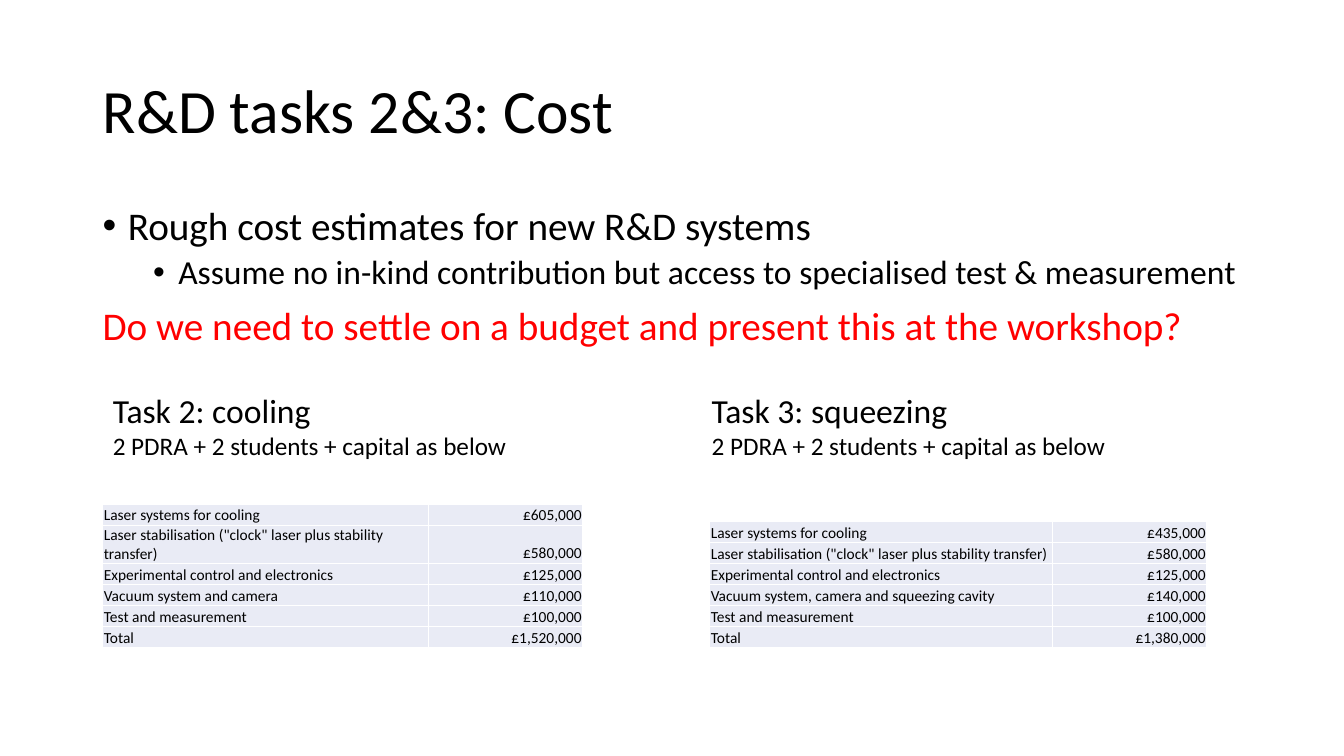
from lxml.etree import SubElement as Sub
from pptx import Presentation
from pptx.dml.color import RGBColor as RGB
from pptx.enum.text import MSO_ANCHOR as Anchor, PP_ALIGN as Align
from pptx.oxml import parse_xml
from pptx.oxml.ns import nsdecls, qn
from pptx.util import Inches as In, Pt

BLACK = RGB(0, 0, 0)
RED = RGB(255, 0, 0)
PALE = RGB(0xE9, 0xEB, 0xF5)
EDGE = "FFFFFF"
FONT = "Calibri"

TITLE = "R&D tasks 2&3: Cost"
# text, size, colour, space before, left indent of a bullet
BODY = [
    ("Rough cost estimates for new R&D systems", 28, BLACK, 10, 0.25),
    ("Assume no in-kind contribution but access to specialised test & measurement",
     24, BLACK, 5, 0.75),
    ("Do we need to settle on a budget and present this at the workshop?",
     28, RED, 10, None),
]
STAFF = "2 PDRA + 2 students + capital as below"
ITEMS = [
    "Laser systems for cooling",
    'Laser stabilisation ("clock" laser plus stability transfer)',
    "Experimental control and electronics",
    "{}",
    "Test and measurement",
]
# heading, fourth item, costs, heading box, table left and top, first column
TASKS = [
    ("Task 2: cooling", "Vacuum system and camera",
     (605000, 580000, 125000, 110000, 100000),
     (1.02, 3.82, 4.28, 1.11), (1.02, 5), 3.23),
    ("Task 3: squeezing", "Vacuum system, camera and squeezing cavity",
     (435000, 580000, 125000, 140000, 100000),
     (6.96, 3.82, 4.15, 0.81), (7.04, 5.17), 3.4),
]
LEFT, WIDE = 0.92, 11.5
COST, ROW = 1.53, 0.21

deck = Presentation()
deck.slide_width, deck.slide_height = In(13.33), In(7.5)
slide = deck.slides.add_slide(deck.slide_layouts[6])


def style(para, size, color=BLACK):
    for run in para.runs:
        run.font.name, run.font.size = FONT, Pt(size)
        run.font.color.rgb = color


def add_text(box, lines):
    """Add a text box whose lines are (text, size, colour) tuples."""
    frame = slide.shapes.add_textbox(*map(In, box)).text_frame
    frame.word_wrap = True
    frame.text = "\n".join(line[0] for line in lines)
    for para, (_, size, color) in zip(frame.paragraphs, lines):
        style(para, size, color)
    return frame


def add_bullet(para, indent):
    props = para._p.get_or_add_pPr()
    props.set("marL", str(In(indent)))
    props.set("indent", str(-In(0.25)))
    Sub(props, qn("a:buFont"), typeface="Arial")
    Sub(props, qn("a:buChar"), char="•")


def fill_cell(cell, text, align):
    cell.text = text
    cell.vertical_anchor = Anchor.BOTTOM
    cell.margin_left = cell.margin_right = cell.margin_top = In(0.01)
    cell.margin_bottom = 0
    para = cell.text_frame.paragraphs[0]
    para.alignment = align
    style(para, 11)
    cell.fill.solid()
    cell.fill.fore_color.rgb = PALE
    for spot, side in enumerate("LRTB"):
        cell._tc.get_or_add_tcPr().insert(spot, parse_xml(
            f'<a:ln{side} {nsdecls("a")} w="12700"><a:solidFill>'
            f'<a:srgbClr val="{EDGE}"/></a:solidFill></a:ln{side}>'))


def add_costs(items, costs, spot, first):
    rows = [*zip(items, costs), ("Total", sum(costs))]
    size = first + COST, ROW * len(rows)
    table = slide.shapes.add_table(len(rows), 2, *map(In, spot + size)).table
    table.first_row = table.horz_banding = False
    table.columns[0].width, table.columns[1].width = In(first), In(COST)
    for r, (item, cost) in enumerate(rows):
        table.rows[r].height = In(ROW)
        fill_cell(table.cell(r, 0), item, Align.LEFT)
        fill_cell(table.cell(r, 1), f"£{cost:,}", Align.RIGHT)


head = add_text((LEFT, 0.4, WIDE, 1.45), [(TITLE, 44, BLACK)])
head.vertical_anchor = Anchor.MIDDLE
head.paragraphs[0].line_spacing = 0.9

body = add_text((LEFT, 2, WIDE, 1.6), [line[:3] for line in BODY])
for para, (*_, before, indent) in zip(body.paragraphs, BODY):
    para.line_spacing, para.space_before = 0.9, Pt(before)
    if indent:
        add_bullet(para, indent)

for name, vacuum, costs, box, spot, first in TASKS:
    add_costs([item.format(vacuum) for item in ITEMS], costs, spot, first)
    add_text(box, [(name, 24, BLACK), (STAFF, 18, BLACK)])

deck.save("out.pptx")
